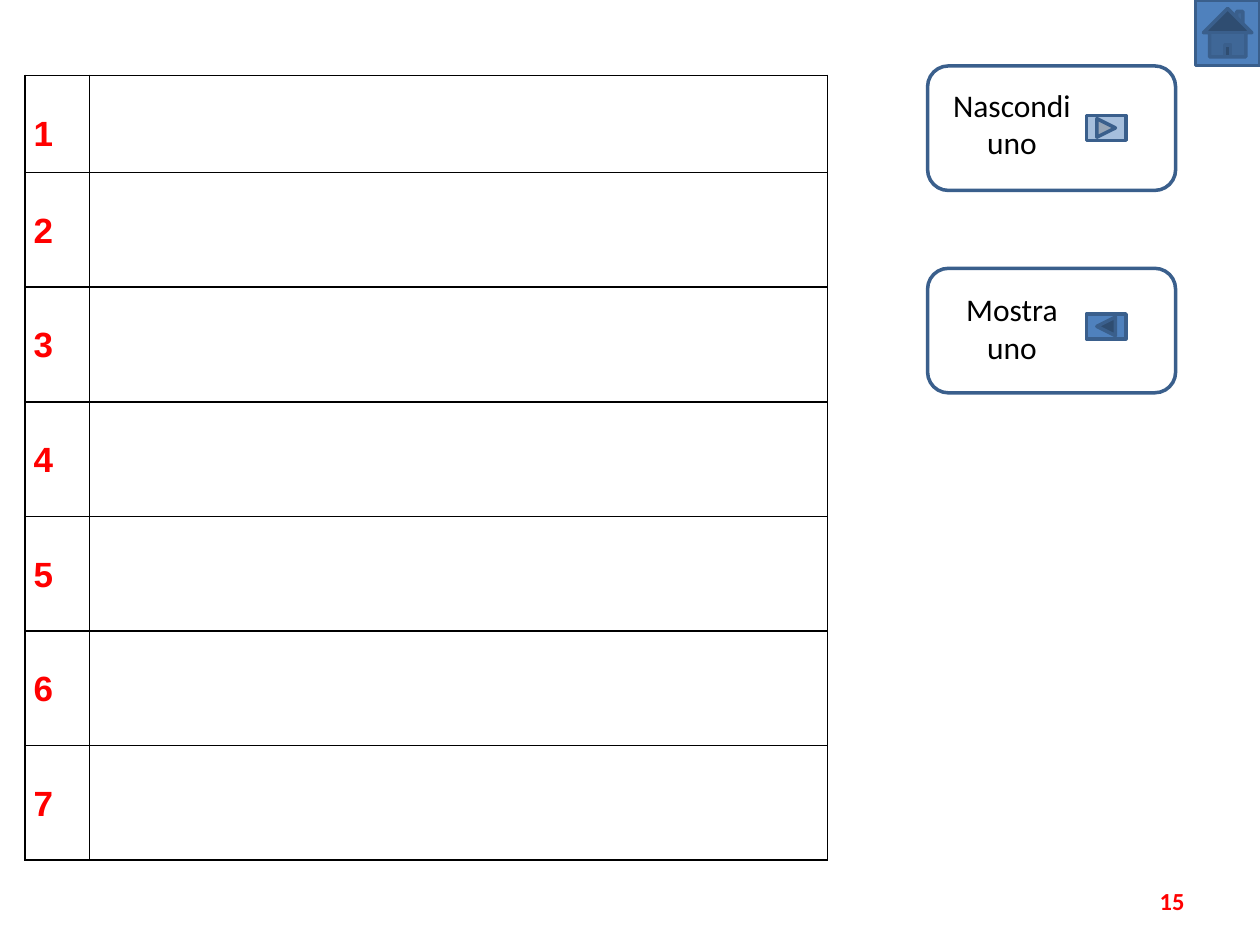
from dataclasses import dataclass
from typing import Optional

from lxml import etree
from pptx import Presentation
from pptx.dml.color import RGBColor
from pptx.enum.shapes import MSO_SHAPE
from pptx.enum.text import MSO_ANCHOR, PP_ALIGN
from pptx.oxml.ns import qn
from pptx.util import Cm, Pt

ROUNDED = MSO_SHAPE.ROUNDED_RECTANGLE
FORWARD = MSO_SHAPE.ACTION_BUTTON_FORWARD_OR_NEXT
BACK = MSO_SHAPE.ACTION_BUTTON_BACK_OR_PREVIOUS
HOME = MSO_SHAPE.ACTION_BUTTON_HOME
MIDDLE, TOP = MSO_ANCHOR.MIDDLE, MSO_ANCHOR.TOP
CENTER, RIGHT = PP_ALIGN.CENTER, PP_ALIGN.RIGHT

BLACK = RGBColor(0x00, 0x00, 0x00)
RED = RGBColor(0xFF, 0x00, 0x00)
BLUE = RGBColor(0x4F, 0x81, 0xBD)
DARK_BLUE = RGBColor(0x3A, 0x5F, 0x8C)

NUMBER_FONT = {"name": "Arial", "size": Pt(20), "bold": True}
LABEL_FONT = {"name": "Calibri", "size": Pt(18)}
PAGE_FONT = {"name": "Calibri", "size": Pt(14), "bold": True}
COLUMN_WIDTHS = (1.3, 14.88)
ROW_HEIGHTS = (1.96,) + (2.31,) * 6


@dataclass
class Box:
    left: float
    top: float
    width: float
    height: float

    def lengths(self) -> tuple:
        return Cm(self.left), Cm(self.top), Cm(self.width), Cm(self.height)


@dataclass
class Label:
    text: str
    box: Box
    font: dict
    color: RGBColor
    align: int
    anchor: int


@dataclass
class Button:
    kind: int
    box: Box
    fill: Optional[RGBColor] = None
    alpha: int = 100


ITEMS = (
    Label("15", Box(18.2, 17.65, 5.93, 1.01), PAGE_FONT, RED, RIGHT, MIDDLE),
    Label("Nascondi uno", Box(18.7, 1.6, 3.4, 1.8), LABEL_FONT, BLACK, CENTER, TOP),
    Button(FORWARD, Box(21.9, 2.33, 0.8, 0.5), BLUE, 50),
    Label("Mostra uno", Box(19.12, 5.73, 2.56, 1.8), LABEL_FONT, BLACK, CENTER, TOP),
    Button(BACK, Box(21.9, 6.33, 0.8, 0.5), BLUE),
    Button(ROUNDED, Box(18.7, 1.33, 5, 2.51)),
    Button(ROUNDED, Box(18.7, 5.41, 5, 2.51)),
    Button(HOME, Box(24.1, 0, 1.3, 1.32), BLUE),
)


def add_run(p, text: str, font: dict, color: RGBColor) -> None:
    r = p.add_run()
    r.text = text
    for name, value in font.items():
        setattr(r.font, name, value)
    r.font.color.rgb = color


def add_label(s, label: Label) -> None:
    tf = s.shapes.add_textbox(*label.box.lengths()).text_frame
    tf.word_wrap = True
    tf.vertical_anchor = label.anchor
    p = tf.paragraphs[0]
    p.alignment = label.align
    add_run(p, label.text, label.font, label.color)


def add_button(s, button: Button) -> None:
    sp = s.shapes.add_shape(button.kind, *button.box.lengths())
    sp.shadow.inherit = False
    sp.line.color.rgb = DARK_BLUE
    sp.line.width = Pt(2)
    if button.fill is None:
        sp.fill.background()
        return
    sp.fill.solid()
    sp.fill.fore_color.rgb = button.fill
    if button.alpha < 100:
        color = sp.fill._xPr.find(qn("a:solidFill"))[0]
        etree.SubElement(color, qn("a:alpha"), val=str(button.alpha * 1000))


def add_borders(cell) -> None:
    tcPr = cell._tc.get_or_add_tcPr()
    for i, side in enumerate(("a:lnL", "a:lnR", "a:lnT", "a:lnB")):
        ln = etree.Element(qn(side), w=str(Pt(1)))
        fill = etree.SubElement(ln, qn("a:solidFill"))
        etree.SubElement(fill, qn("a:srgbClr"), val=str(BLACK))
        tcPr.insert(i, ln)


def add_number_table(s) -> None:
    box = Box(0.5, 1.52, sum(COLUMN_WIDTHS), sum(ROW_HEIGHTS))
    table = s.shapes.add_table(
        len(ROW_HEIGHTS), len(COLUMN_WIDTHS), *box.lengths()
    ).table
    table.first_row = table.horz_banding = False
    for column, width in zip(table.columns, COLUMN_WIDTHS):
        column.width = Cm(width)
    for number, (row, height) in enumerate(zip(table.rows, ROW_HEIGHTS), 1):
        row.height = Cm(height)
        for cell in row.cells:
            cell.margin_left = cell.margin_right = Cm(0.18)
            cell.margin_top = cell.margin_bottom = 0
            cell.fill.background()
            add_borders(cell)
        p = row.cells[0].text_frame.paragraphs[0]
        p.line_spacing = 2.0
        add_run(p, str(number), NUMBER_FONT, RED)


def main() -> None:
    prs = Presentation()
    prs.slide_width, prs.slide_height = Cm(25.4), Cm(19.05)
    s = prs.slides.add_slide(prs.slide_layouts[6])
    add_number_table(s)
    for item in ITEMS:
        if isinstance(item, Label):
            add_label(s, item)
        else:
            add_button(s, item)
    prs.save("out.pptx")


if __name__ == "__main__":
    main()
